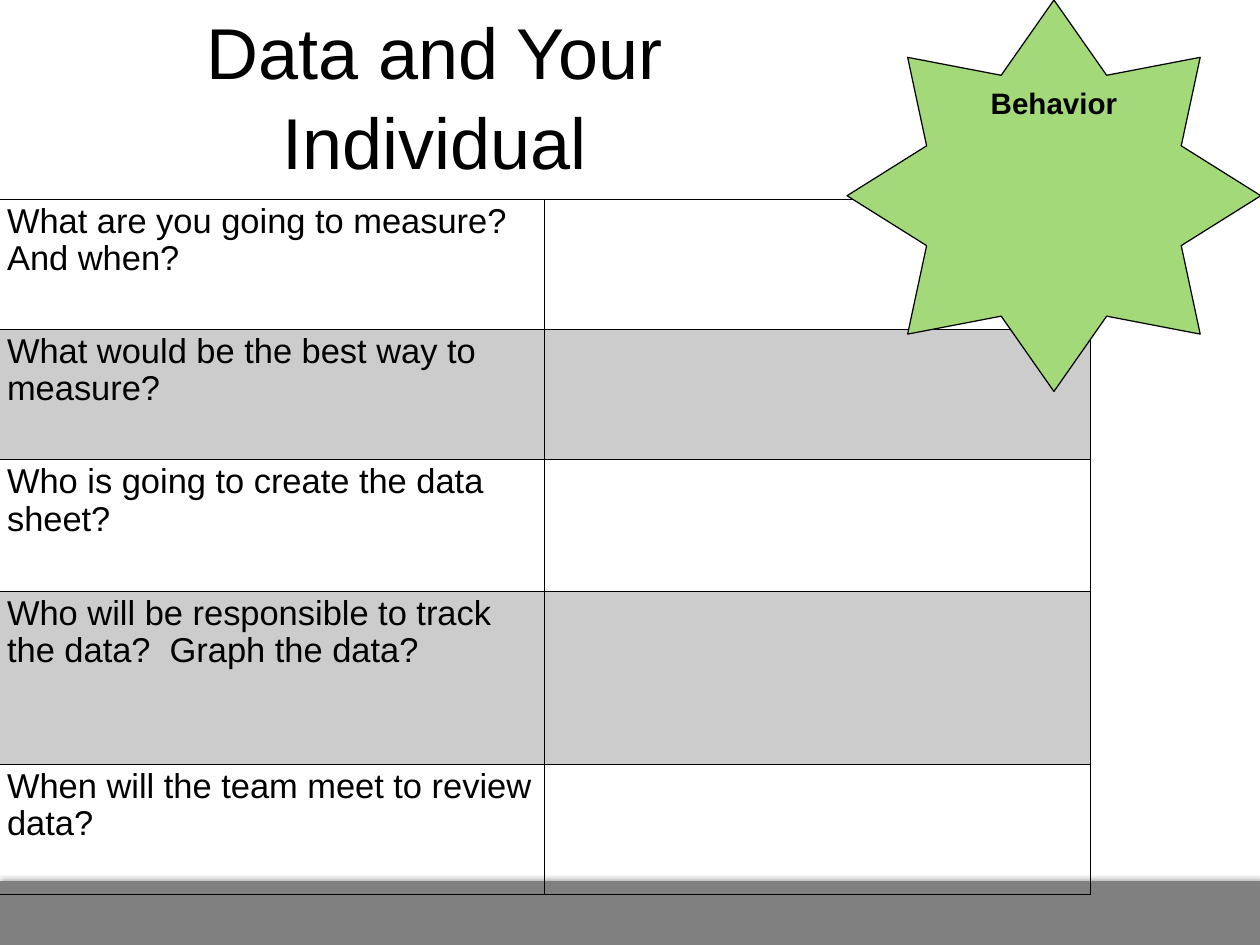
import pptx
import pptx.util
import pptx.dml.color
import pptx.enum.shapes
import pptx.enum.text
import pptx.oxml
import pptx.oxml.ns

Inches = pptx.util.Inches
Pt = pptx.util.Pt
MSO_SHAPE = pptx.enum.shapes.MSO_SHAPE
ANCHOR = pptx.enum.text.MSO_ANCHOR
ALIGN = pptx.enum.text.PP_ALIGN

TITLE = "Data and Your Individual"
BADGE = "Behavior"
QUESTIONS = [
    ("What are you going to measure?  And when?", 1.47),
    ("What would be the best way to measure?", 1.47),
    ("Who is going to create the data sheet?", 1.49),
    ("Who will be responsible to track the data?  Graph the data?", 1.95),
    ("When will the team meet to review data?", 1.47),
]
COLORS = {"ink": "000000", "bar": "808080", "star": "A3D979"}
SLIDE_W, SLIDE_H = 14.22, 10.67
BAR_H = 0.72
COL_W = 6.16
NS = pptx.oxml.ns.nsdecls("a")


def rgb(name):
    return pptx.dml.color.RGBColor.from_string(COLORS[name])


def put_text(tf, text, size, bold=False, align=ALIGN.LEFT, spacing=1.0):
    p = tf.paragraphs[0]
    p.alignment = align
    p.line_spacing = spacing
    r = p.add_run()
    r.text = text
    r.font.name = "Arial"
    r.font.size = Pt(size)
    r.font.bold = bold
    r.font.color.rgb = rgb("ink")


def set_margins(tf, inset):
    tf.margin_left = tf.margin_right = Inches(inset)
    tf.margin_top = tf.margin_bottom = Inches(inset)


def add_filled(slide, kind, x, y, w, h, color):
    sp = slide.shapes.add_shape(kind, Inches(x), Inches(y), Inches(w), Inches(h))
    sp.shadow.inherit = False
    sp.fill.solid()
    sp.fill.fore_color.rgb = rgb(color)
    return sp


def add_shadow(sp):
    effects = sp._element.spPr.find(pptx.oxml.ns.qn("a:effectLst"))
    effects.append(pptx.oxml.parse_xml(
        f'<a:outerShdw {NS} blurRad="{Pt(3.1)}" dist="{Pt(1.8)}" dir="16200000" rotWithShape="0">'
        f'<a:srgbClr val="{COLORS["ink"]}"><a:alpha val="35000"/></a:srgbClr></a:outerShdw>'))


def format_cell(cell, shaded):
    tc_pr = cell._tc.get_or_add_tcPr()
    for side in ("lnL", "lnR", "lnT", "lnB"):
        tc_pr.append(pptx.oxml.parse_xml(
            f'<a:{side} {NS} w="{Pt(1)}"><a:solidFill><a:srgbClr val="{COLORS["ink"]}"/>'
            f'</a:solidFill></a:{side}>'))
    if shaded:
        cell.fill.solid()
        cell.fill.fore_color.rgb = rgb("ink")
        color = tc_pr.find(".//" + pptx.oxml.ns.qn("a:solidFill") + "[last()]")
        color = tc_pr[-1][0]
        color.append(pptx.oxml.parse_xml(f'<a:alpha {NS} val="20000"/>'))
    else:
        cell.fill.background()
    cell.margin_left = cell.margin_right = Inches(0.09)
    cell.margin_top = cell.margin_bottom = Inches(0.05)


def add_questions(slide):
    height = sum(h for _, h in QUESTIONS)
    table = slide.shapes.add_table(
        len(QUESTIONS), 2, Inches(-0.01), Inches(2.25), Inches(2 * COL_W), Inches(height)).table
    table.first_row = False
    table.horz_banding = False
    for col in table.columns:
        col.width = Inches(COL_W)
    for i, (question, row_h) in enumerate(QUESTIONS):
        table.rows[i].height = Inches(row_h)
        for cell in table.rows[i].cells:
            format_cell(cell, shaded=i % 2 == 1)
        put_text(table.cell(i, 0).text_frame, question, 28, spacing=0.97)


def main():
    prs = pptx.Presentation()
    prs.slide_width = Inches(SLIDE_W)
    prs.slide_height = Inches(SLIDE_H)
    slide = prs.slides.add_slide(prs.slide_layouts[5])

    bar = add_filled(slide, MSO_SHAPE.RECTANGLE, 0, SLIDE_H - BAR_H, SLIDE_W, BAR_H, "bar")
    bar.line.fill.background()
    add_shadow(bar)

    title = slide.shapes.title
    title.left, title.top = Inches(0.53), Inches(0.17)
    title.width, title.height = Inches(8.75), Inches(1.78)
    tf = title.text_frame
    tf.word_wrap = True
    tf.auto_size = pptx.enum.text.MSO_AUTO_SIZE.NONE
    tf.vertical_anchor = ANCHOR.MIDDLE
    set_margins(tf, 0.05)
    put_text(tf, TITLE, 58.5, align=ALIGN.CENTER, spacing=1.04)

    add_questions(slide)

    star = add_filled(slide, MSO_SHAPE.STAR_8_POINT, 9.56, 0, 4.67, 4.42, "star")
    star.adjustments[0] = 0.333
    star.line.color.rgb = rgb("ink")
    star.line.width = Pt(1)
    tf = star.text_frame
    tf.word_wrap = True
    tf.vertical_anchor = ANCHOR.TOP
    set_margins(tf, 0.11)
    put_text(tf, BADGE, 24, bold=True, align=ALIGN.CENTER)

    prs.save("out.pptx")


if __name__ == "__main__":
    main()
